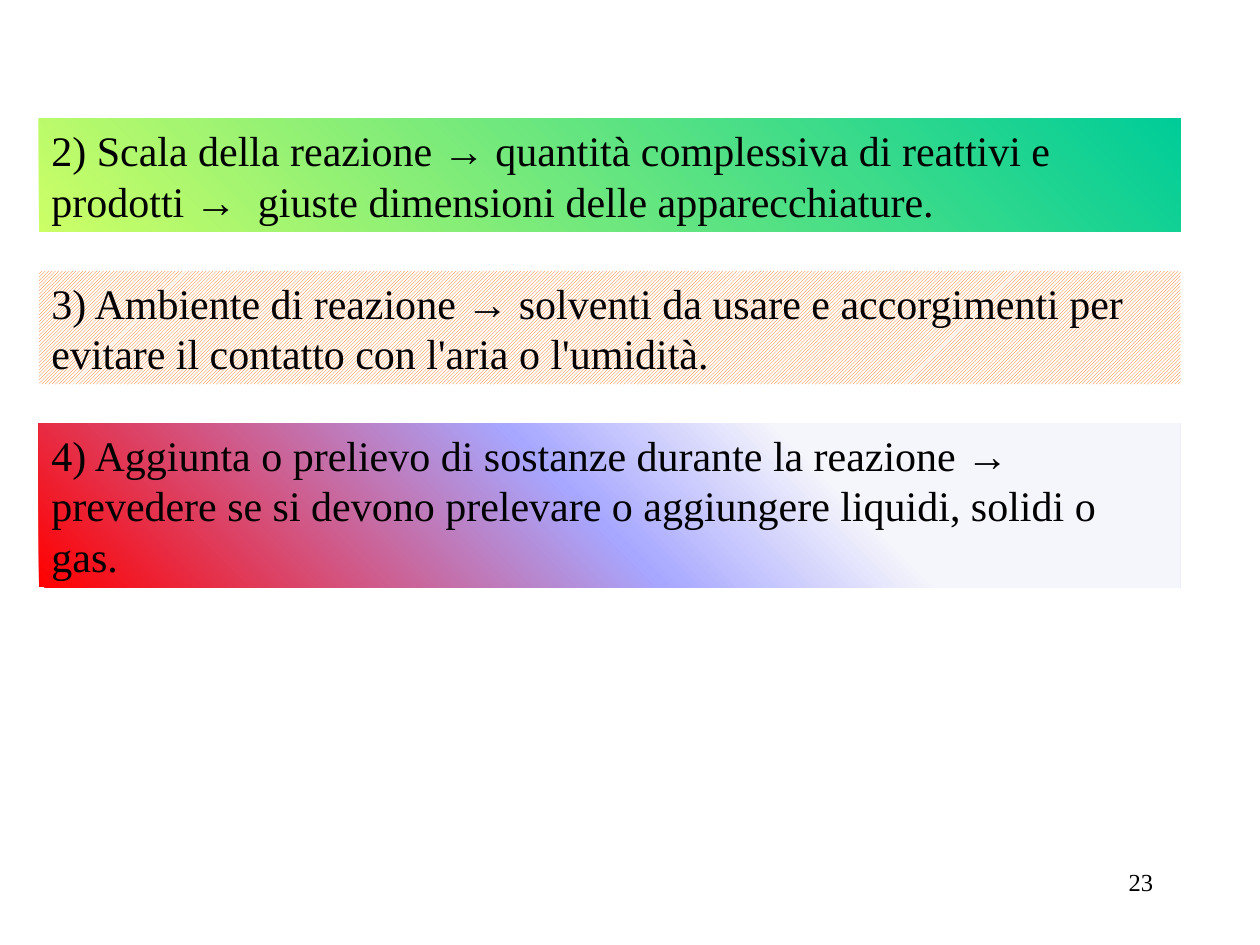
from copy import deepcopy
from dataclasses import dataclass

from pptx import Presentation
from pptx import util as u
from pptx.dml.color import RGBColor
from pptx.enum import dml, shapes, text
from pptx.oxml.ns import qn


@dataclass(frozen=True)
class Theme:
    font: str = "Times New Roman"
    ink: str = "000000"
    body_size: int = 24
    number_size: int = 14
    scale_stops: tuple = ((0, "CCFF66"), (1, "00CC99"))
    hatch: str = "FF6600"
    hatch_ground: str = "FFFFFF"
    addition_stops: tuple = ((0, "FF0000"), (0.48, "A7A7FF"), (0.69, "F5F5FC"))


THEME = Theme()
WIDTH, HEIGHT = 10, 7.5
LEFT, TOP = 0.31, 0.94
PANEL_WIDTH, GAP = 9.06, 0.31


def rgb(value):
    return RGBColor.from_string(value)


def fill_gradient(panel, stops):
    """Blend the (position, colour) stops from bottom left to top right."""
    panel.fill.gradient()
    panel.fill.gradient_angle = 45
    stop_list = panel._element.spPr.find(qn("a:gradFill")).find(qn("a:gsLst"))
    while len(stop_list) < len(stops):
        stop_list.append(deepcopy(stop_list[-1]))
    for stop, (position, colour) in zip(panel.fill.gradient_stops, stops):
        stop.position = position
        stop.color.rgb = rgb(colour)


def fill_hatch(panel, colours):
    ink, ground = colours
    panel.fill.patterned()
    panel.fill.pattern = dml.MSO_PATTERN.LIGHT_UPWARD_DIAGONAL
    panel.fill.fore_color.rgb = rgb(ink)
    panel.fill.back_color.rgb = rgb(ground)


def write(frame, wording, size, align):
    frame.word_wrap = True
    frame.vertical_anchor = text.MSO_ANCHOR.TOP
    paragraph = frame.paragraphs[0]
    paragraph.text = wording
    paragraph.alignment = align
    paragraph.font.name = THEME.font
    paragraph.font.size = u.Pt(size)
    paragraph.font.color.rgb = rgb(THEME.ink)


def add_panel(slide, top, height, wording, paint, colours):
    panel = slide.shapes.add_shape(
        shapes.MSO_SHAPE.RECTANGLE,
        u.Inches(LEFT), u.Inches(top), u.Inches(PANEL_WIDTH), u.Inches(height))
    panel.shadow.inherit = False
    panel.line.fill.background()
    paint(panel, colours)
    write(panel.text_frame, wording, THEME.body_size, text.PP_ALIGN.LEFT)


def add_page_number(slide, number):
    box = slide.shapes.add_textbox(
        u.Inches(7.17), u.Inches(6.83), u.Inches(2.08), u.Inches(0.5))
    write(box.text_frame, number, THEME.number_size, text.PP_ALIGN.RIGHT)


def main():
    deck = Presentation()
    deck.slide_width, deck.slide_height = u.Inches(WIDTH), u.Inches(HEIGHT)
    slide = deck.slides.add_slide(deck.slide_layouts.get_by_name("Blank"))

    panels = (
        (0.9, "2) Scala della reazione → quantità complessiva di reattivi e "
              "prodotti →  giuste dimensioni delle apparecchiature.",
         fill_gradient, THEME.scale_stops),
        (0.9, "3) Ambiente di reazione → solventi da usare e accorgimenti per "
              "evitare il contatto con l'aria o l'umidità.",
         fill_hatch, (THEME.hatch, THEME.hatch_ground)),
        (1.3, "4) Aggiunta o prelievo di sostanze durante la reazione → "
              "prevedere se si devono prelevare o aggiungere liquidi, solidi o gas.",
         fill_gradient, THEME.addition_stops),
    )
    top = TOP
    for height, wording, paint, colours in panels:
        add_panel(slide, top, height, wording, paint, colours)
        top += height + GAP

    add_page_number(slide, "23")
    deck.save("out.pptx")


if __name__ == "__main__":
    main()
